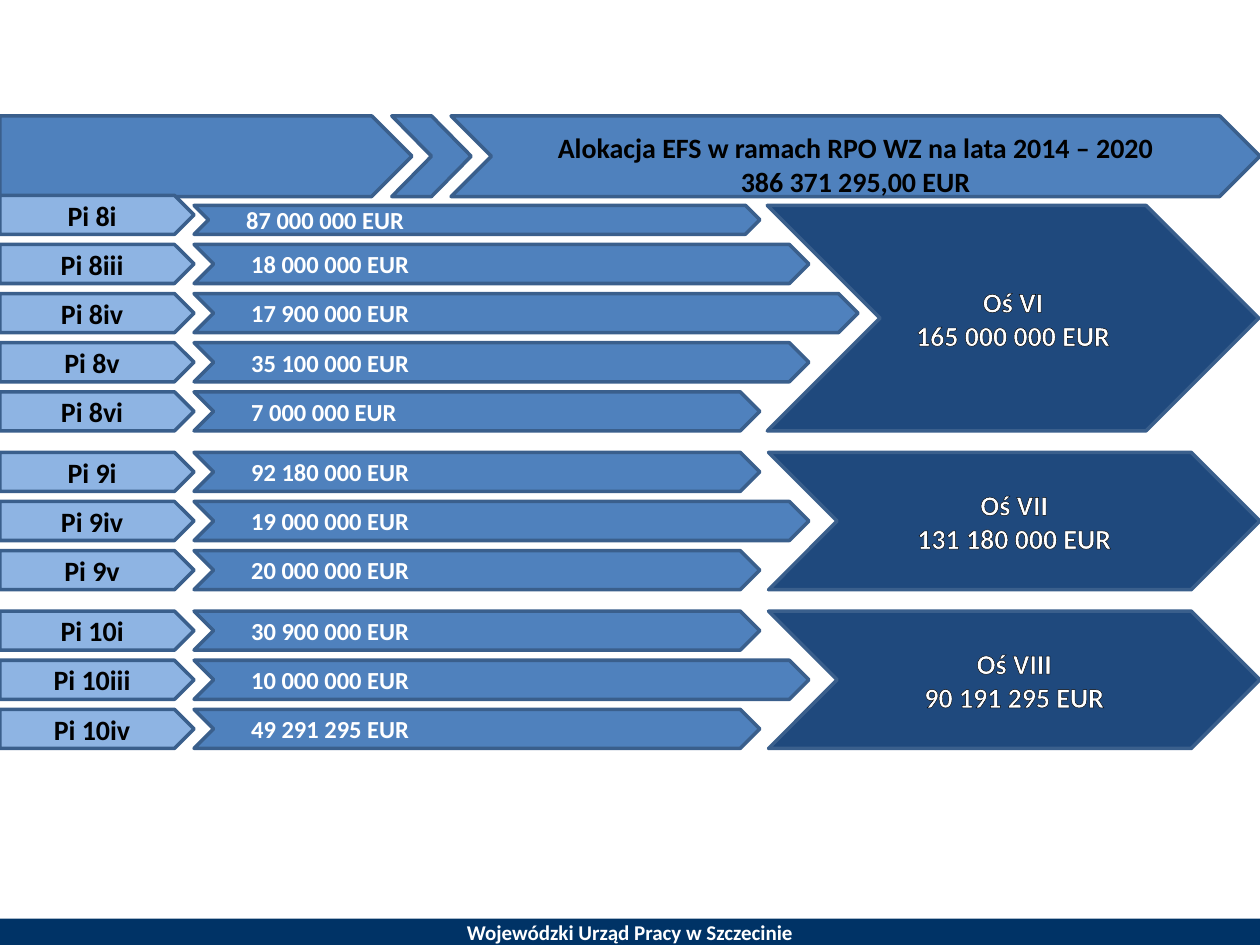
"""Builds the slide on the ESF allocation by investment priority and axis."""
from dataclasses import dataclass

from lxml import etree
from pptx import Presentation
from pptx.dml.color import RGBColor
from pptx.enum.shapes import MSO_SHAPE
from pptx.enum.text import MSO_ANCHOR, PP_ALIGN
from pptx.oxml.ns import qn
from pptx.util import Inches, Pt

PENTAGON, CHEVRON, RECTANGLE = MSO_SHAPE.PENTAGON, MSO_SHAPE.CHEVRON, MSO_SHAPE.RECTANGLE
CENTER, LEFT = PP_ALIGN.CENTER, PP_ALIGN.LEFT
TOP, MIDDLE = MSO_ANCHOR.TOP, MSO_ANCHOR.MIDDLE

COLORS = {
    "footer": "003366", "bar": "4F81BD", "priority": "8EB4E3", "axis": "1F497D",
    "border": "3A5F8C", "dark": "000000", "light": "FFFFFF",
}
FONT = "Calibri"
STEP = 0.39
ROW_HEIGHT = 0.31
PRIORITY_WIDTH = 1.54
SHORTEST_BAR = 4.49
HEADER_TOP, HEADER_HEIGHT = 0.92, 0.64


@dataclass(frozen=True)
class Box:
    left: float
    top: float
    width: float
    height: float


@dataclass(frozen=True)
class Axis:
    name: str
    total: str
    top: float
    left: float
    trim: float
    priorities: tuple[tuple[str, str], ...]


AXES = (
    Axis("Oś VI", "165 000 000 EUR", 1.55, 6.09, 0.08, (
        ("Pi 8i", "87 000 000 EUR"), ("Pi 8iii", "18 000 000 EUR"),
        ("Pi 8iv", "17 900 000 EUR"), ("Pi 8v", "35 100 000 EUR"),
        ("Pi 8vi", "7 000 000 EUR"))),
    Axis("Oś VII", "131 180 000 EUR", 3.59, 6.1, 0, (
        ("Pi 9i", "92 180 000 EUR"), ("Pi 9iv", "19 000 000 EUR"),
        ("Pi 9v", "20 000 000 EUR"))),
    Axis("Oś VIII", "90 191 295 EUR", 4.85, 6.1, 0, (
        ("Pi 10i", "30 900 000 EUR"), ("Pi 10iii", "10 000 000 EUR"),
        ("Pi 10iv", "49 291 295 EUR"))),
)


def rgb(name: str) -> RGBColor:
    """Return a named colour."""
    return RGBColor.from_string(COLORS[name])


def add_block(shapes, kind, box: Box, fill: str, border: bool = True):
    """Draw one filled preset shape."""
    block = shapes.add_shape(kind, Inches(box.left), Inches(box.top),
                             Inches(box.width), Inches(box.height))
    block.shadow.inherit = False
    block.fill.solid()
    block.fill.fore_color.rgb = rgb(fill)
    if border:
        block.line.color.rgb = rgb("border")
        block.line.width = Pt(2)
    else:
        block.line.fill.background()
    return block


def write(block, text: str, size: int, color: str, align=CENTER, anchor=MIDDLE) -> None:
    """Set the text of a block and format its runs."""
    frame = block.text_frame
    frame.text = text
    frame.word_wrap = True
    frame.vertical_anchor = anchor
    for paragraph in frame.paragraphs:
        paragraph.alignment = align
        for run in paragraph.runs:
            run.font.name = FONT
            run.font.size = Pt(size)
            run.font.bold = True
            run.font.color.rgb = rgb(color)


def outline(paragraph, width: float) -> None:
    """Give the letters of a paragraph a dark outline."""
    for run in paragraph.runs:
        line = etree.Element(qn("a:ln"), w=str(Pt(width)))
        fill = etree.SubElement(line, qn("a:solidFill"))
        etree.SubElement(fill, qn("a:srgbClr"), val=COLORS["dark"])
        run.font._element.insert(0, line)


def indent(paragraph, margin: float, first_line: float) -> None:
    """Set the left margin and first-line indent of a paragraph."""
    properties = paragraph._p.get_or_add_pPr()
    properties.set("marL", str(Inches(margin)))
    properties.set("indent", str(Inches(first_line)))


def draw_header(shapes) -> None:
    """Draw the title band as a group of three arrows."""
    band = shapes.add_group_shape().shapes
    add_block(band, PENTAGON, Box(0, HEADER_TOP, 3.27, HEADER_HEIGHT), "bar")
    title = add_block(band, CHEVRON, Box(3.58, HEADER_TOP, 6.42, HEADER_HEIGHT), "bar")
    write(title, "Alokacja EFS w ramach RPO WZ na lata 2014 – 2020\n386 371 295,00 EUR",
          16, "dark", anchor=TOP)
    title.text_frame.margin_top = Inches(0.12)
    title.text_frame.margin_bottom = 0
    outline(title.text_frame.paragraphs[1], 1)
    add_block(band, CHEVRON, Box(3.11, HEADER_TOP, 0.63, HEADER_HEIGHT), "bar")


def draw_axis(shapes, axis: Axis) -> None:
    """Draw the priorities of an axis, their amounts and the axis total."""
    last = len(axis.priorities) - 1
    for row, (priority, amount) in enumerate(axis.priorities):
        top = axis.top + row * STEP
        label = add_block(shapes, PENTAGON, Box(0, top, PRIORITY_WIDTH, ROW_HEIGHT), "priority")
        write(label, priority, 16, "dark")
        trim = 0 if row else axis.trim
        width = SHORTEST_BAR + min(row, last - row) * STEP
        bar = add_block(shapes, CHEVRON,
                        Box(PRIORITY_WIDTH, top + trim, width, ROW_HEIGHT - trim), "bar")
        write(bar, amount, 14, "light", align=LEFT)
        indent(bar.text_frame.paragraphs[0], 0.46, -0.26)
    height = last * STEP + ROW_HEIGHT - axis.trim
    total = add_block(shapes, CHEVRON, Box(axis.left, axis.top + axis.trim, 3.9, height), "axis")
    write(total, f"{axis.name}\n{axis.total}", 16, "light")
    for paragraph in total.text_frame.paragraphs:
        outline(paragraph, 0.75)


def main() -> None:
    """Build and save the slide."""
    deck = Presentation()
    deck.slide_width, deck.slide_height = Inches(10), Inches(7.5)
    shapes = deck.slides.add_slide(deck.slide_layouts[6]).shapes
    footer = add_block(shapes, RECTANGLE, Box(0, 7.29, 10, 0.21), "footer", border=False)
    write(footer, "Wojewódzki Urząd Pracy w Szczecinie", 12, "light")
    footer.text_frame.word_wrap = False
    draw_header(shapes)
    for axis in AXES:
        draw_axis(shapes, axis)
    deck.save("out.pptx")


if __name__ == "__main__":
    main()
